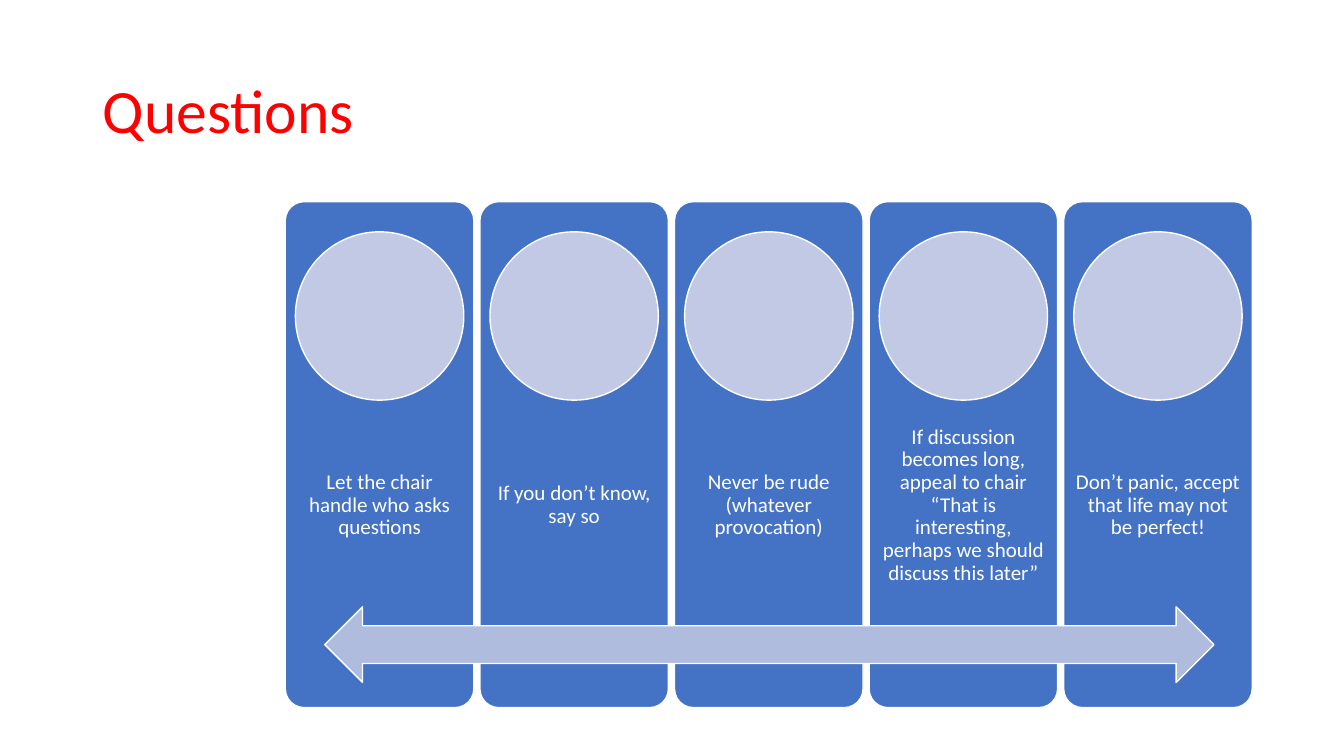
from pptx import Presentation
from pptx.dml.color import RGBColor
from pptx.enum.shapes import MSO_SHAPE
from pptx.enum.text import MSO_ANCHOR, MSO_AUTO_SIZE, PP_ALIGN
from pptx.util import Emu, Pt

EMU_PER_PX = 9144  # 100 px to the inch
TITLE_ONLY = 5

RED = RGBColor(0xFF, 0x00, 0x00)
WHITE = RGBColor(0xFF, 0xFF, 0xFF)
BLUE = RGBColor(0x44, 0x72, 0xC4)
PALE_BLUE = RGBColor(0xC1, 0xC9, 0xE4)
ARROW_BLUE = RGBColor(0xB0, 0xBC, 0xDE)

ADVICE = [
    "Let the chair handle who asks questions",
    "If you don’t know, say so",
    "Never be rude (whatever provocation)",
    "If discussion becomes long, appeal to chair “That is interesting, "
    "perhaps we should discuss this later”",
    "Don’t panic, accept that life may not be perfect!",
]

CARD_LEFT, CARD_TOP, CARD_WIDTH, CARD_HEIGHT = 283, 200, 187, 502
CARD_PITCH = 193
CIRCLE_TOP, CIRCLE_SIZE = 230, 167
CIRCLE_INDENT = (CARD_WIDTH - CIRCLE_SIZE) // 2
TEXT_TOP, TEXT_HEIGHT, TEXT_INSET = 401, 201, 12


def px(length):
    return Emu(length * EMU_PER_PX)


class SlideBuilder:
    font = "Calibri"
    line_spacing = 0.9

    def __init__(self, presentation):
        self.slide = presentation.slides.add_slide(
            presentation.slide_layouts[TITLE_ONLY])

    def fill_frame(self, frame, text, size, color, alignment):
        frame.word_wrap = True
        frame.auto_size = MSO_AUTO_SIZE.NONE
        frame.vertical_anchor = MSO_ANCHOR.MIDDLE
        paragraph = frame.paragraphs[0]
        paragraph.alignment = alignment
        paragraph.line_spacing = self.line_spacing
        run = paragraph.add_run()
        run.text = text
        run.font.name = self.font
        run.font.size = Pt(size)
        run.font.color.rgb = color

    def title(self, text, left, top, width, height):
        title = self.slide.shapes.title
        title.left, title.top = px(left), px(top)
        title.width, title.height = px(width), px(height)
        self.fill_frame(title.text_frame, text, 44, RED, PP_ALIGN.LEFT)

    def text(self, text, left, top, width, height):
        box = self.slide.shapes.add_textbox(
            px(left), px(top), px(width), px(height))
        frame = box.text_frame
        frame.margin_left = frame.margin_right = px(TEXT_INSET)
        frame.margin_top = frame.margin_bottom = px(TEXT_INSET)
        self.fill_frame(frame, text, 15, WHITE, PP_ALIGN.CENTER)

    def shape(self, kind, fill, left, top, width, height):
        shape = self.slide.shapes.add_shape(
            kind, px(left), px(top), px(width), px(height))
        shape.shadow.inherit = False
        shape.fill.solid()
        shape.fill.fore_color.rgb = fill
        shape.line.color.rgb = WHITE
        shape.line.width = Pt(1)
        return shape

    def card(self, text, left):
        """Add a rounded column with a circle above its advice."""
        column = self.shape(MSO_SHAPE.ROUNDED_RECTANGLE, BLUE,
                            left, CARD_TOP, CARD_WIDTH, CARD_HEIGHT)
        column.adjustments[0] = 0.1
        self.text(text, left, TEXT_TOP, CARD_WIDTH, TEXT_HEIGHT)
        self.shape(MSO_SHAPE.OVAL, PALE_BLUE, left + CIRCLE_INDENT,
                   CIRCLE_TOP, CIRCLE_SIZE, CIRCLE_SIZE)


def main():
    presentation = Presentation()
    presentation.slide_width = px(1333)
    presentation.slide_height = px(750)

    builder = SlideBuilder(presentation)
    builder.title("Questions", 92, 40, 1150, 145)
    for index, advice in enumerate(ADVICE):
        builder.card(advice, CARD_LEFT + index * CARD_PITCH)
    builder.shape(MSO_SHAPE.LEFT_RIGHT_ARROW, ARROW_BLUE, 322, 602, 882, 75)

    presentation.save("out.pptx")


if __name__ == "__main__":
    main()
